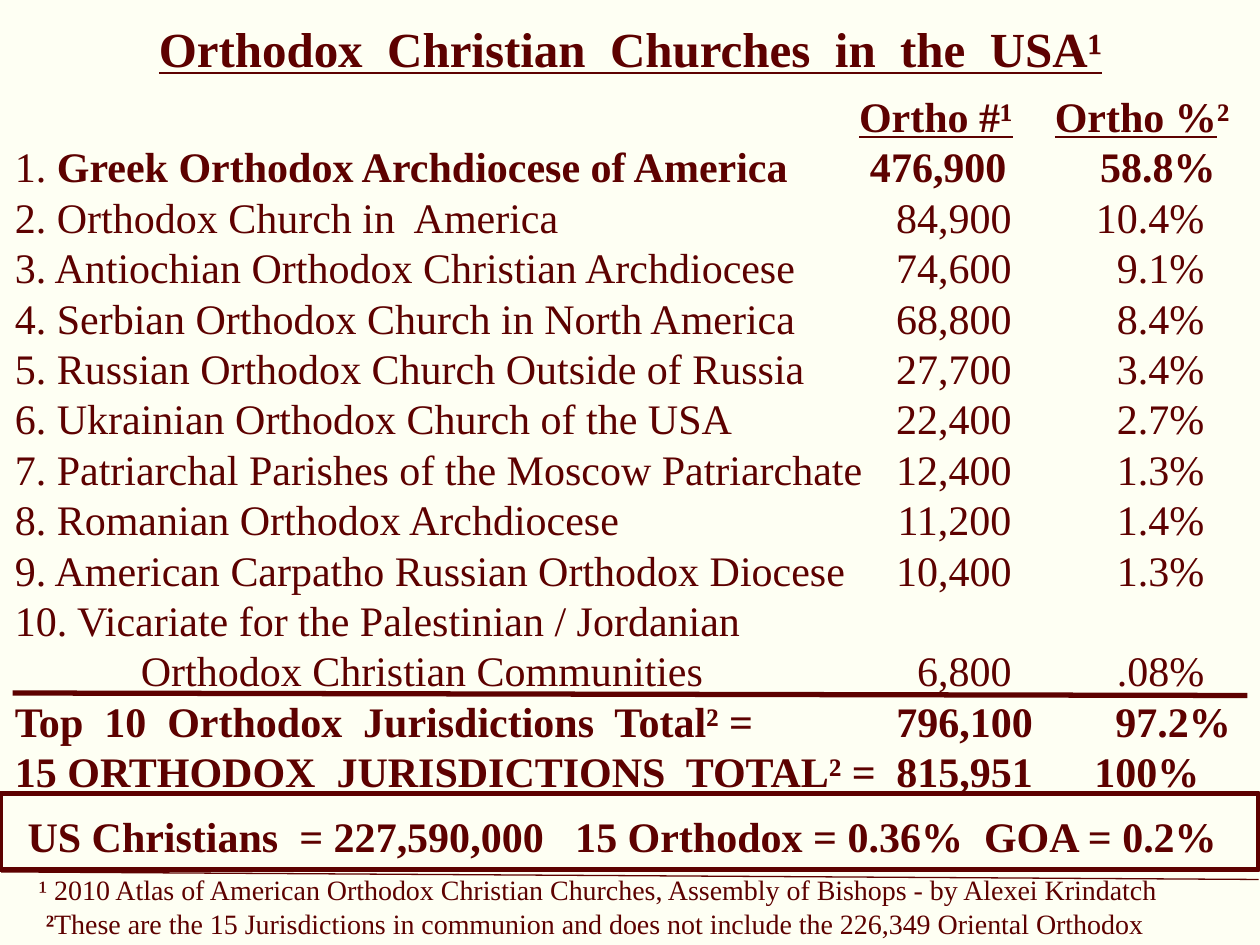
from lxml import etree
from pptx import Presentation, util as u
from pptx.dml.color import RGBColor
from pptx.enum import shapes, text
from pptx.oxml.ns import qn

MAROON = RGBColor(0x5D, 0x01, 0x00)
CREAM = RGBColor(0xFE, 0xFF, 0xF3)
FONT = "Times New Roman"

deck = Presentation()
deck.slide_width, deck.slide_height = u.Inches(10), u.Inches(7.5)
page = deck.slides.add_slide(deck.slide_layouts[6])
page.background.fill.solid()
page.background.fill.fore_color.rgb = CREAM


def add_text(left, top, width, height, lines, size, bold=False):
    """Add a text box with one paragraph per line and return its paragraphs."""
    box = page.shapes.add_textbox(*map(u.Inches, (left, top, width, height)))
    frame = box.text_frame
    frame.word_wrap = True
    frame.text = "\n".join(lines)
    for para in frame.paragraphs:
        para.font.name = FONT
        para.font.size = u.Pt(size)
        para.font.bold = bold
        para.font.color.rgb = MAROON
    return frame.paragraphs


def set_tabs(para, *stops):
    """Set tab stops, each an (inches, alignment) pair."""
    tabs = etree.Element(qn("a:tabLst"))
    for position, alignment in stops:
        etree.SubElement(tabs, qn("a:tab"), pos=str(u.Inches(position)), algn=alignment)
    properties = para._p.get_or_add_pPr()
    default_font = properties.find(qn("a:defRPr"))
    default_font.addprevious(tabs)


# Jurisdictions: name, members, share, right edges of the two number columns
PLAIN = (7.91, 9.44)
rows = [
    ("", "", "", (7.92, 9.64)),
    ("", "476,900", "58.8%", (7.87, 9.53)),
    ("2. Orthodox Church in  America", "84,900", "10.4%", PLAIN),
    ("3. Antiochian Orthodox Christian Archdiocese", "74,600", "9.1%", PLAIN),
    ("4. Serbian Orthodox Church in North America", "68,800", "8.4%", PLAIN),
    ("5. Russian Orthodox Church Outside of Russia", "27,700", "3.4%", PLAIN),
    ("6. Ukrainian Orthodox Church of the USA", "22,400", "2.7%", PLAIN),
    ("7. Patriarchal Parishes of the Moscow Patriarchate", "12,400", "1.3%", PLAIN),
    ("8. Romanian Orthodox Archdiocese", "11,200", "1.4%", PLAIN),
    ("9. American Carpatho Russian Orthodox Diocese", "10,400", "1.3%", PLAIN),
    ("10. Vicariate for the Palestinian / Jordanian", "", "", PLAIN),
    ("\tOrthodox Christian Communities", "6,800", ".08%", PLAIN),
    ("Top  10  Orthodox  Jurisdictions  Total² =", "796,100", "97.2%", (8.08, 9.65)),
    ("15 ORTHODOX  JURISDICTIONS  TOTAL² =", "815,951", "100%", (8.08, 9.4)),
]
# The first two rows mix styles and are filled run by run
mixed_rows = [
    [("\t", True, False), ("Ortho #¹", True, True), ("\t", True, False),
     ("Ortho %", True, True), ("²", True, False)],
    [("1. ", False, False),
     ("Greek Orthodox Archdiocese of America\t476,900\t58.8%", True, False)],
]
lines = ["\t".join(filter(None, row[:3])) for row in rows]
lines[:2] = ["", ""]
paragraphs = add_text(0.02, 0.67, 9.96, 6.16, lines, 24)
for para, (name, members, share, edges) in zip(paragraphs, rows):
    stops = [(edge, "r") for edge in edges]
    if name.startswith("\t"):
        stops.insert(0, (1, "l"))
    set_tabs(para, *stops)
for para, pieces in zip(paragraphs, mixed_rows):
    for words, bold, underline in pieces:
        span = para.add_run()
        span.text = words
        span.font.bold = bold
        span.font.underline = underline
for para in paragraphs[-2:]:
    para.font.bold = True

# Frame around the summary
frame_box = page.shapes.add_shape(
    shapes.MSO_SHAPE.RECTANGLE, u.Inches(0), u.Inches(6.3), u.Inches(9.99), u.Inches(0.6))
frame_box.shadow.inherit = False
frame_box.fill.background()
frame_box.line.color.rgb = MAROON
frame_box.line.width = u.Pt(3)

# Rules above the totals and above the footnotes
for x1, y1, x2, y2, weight in [(0.1, 5.5, 9.9, 5.52, 3), (0.01, 6.92, 9.99, 6.98, 0.75)]:
    rule = page.shapes.add_connector(
        shapes.MSO_CONNECTOR.STRAIGHT, *map(u.Inches, (x1, y1, x2, y2)))
    rule.line.color.rgb = MAROON
    rule.line.width = u.Pt(weight)
    etree.SubElement(rule._element.spPr, qn("a:effectLst"))

# Summary
add_text(0.12, 6.38, 10.05, 0.91,
         ["US Christians  = 227,590,000   15 Orthodox = 0.36%  GOA = 0.2%"], 24, bold=True)

# Title
title = add_text(1.07, 0.1, 7.87, 1.04,
                 ["Orthodox  Christian  Churches  in  the  USA¹"], 28, bold=True)[0]
title.alignment = text.PP_ALIGN.CENTER
title.font.underline = True

# Footnotes
notes = add_text(0.21, 6.88, 9.17, 1.04, [
    "¹ 2010 Atlas of American Orthodox Christian Churches, Assembly of Bishops - by Alexei Krindatch",
    " ",
], 16)
for words, bold in [
    ("²", True),
    ("These are the 15 Jurisdictions in communion and does not include the 226,349 Oriental Orthodox",
     False),
]:
    span = notes[1].add_run()
    span.text = words
    span.font.bold = bold

deck.save("out.pptx")
